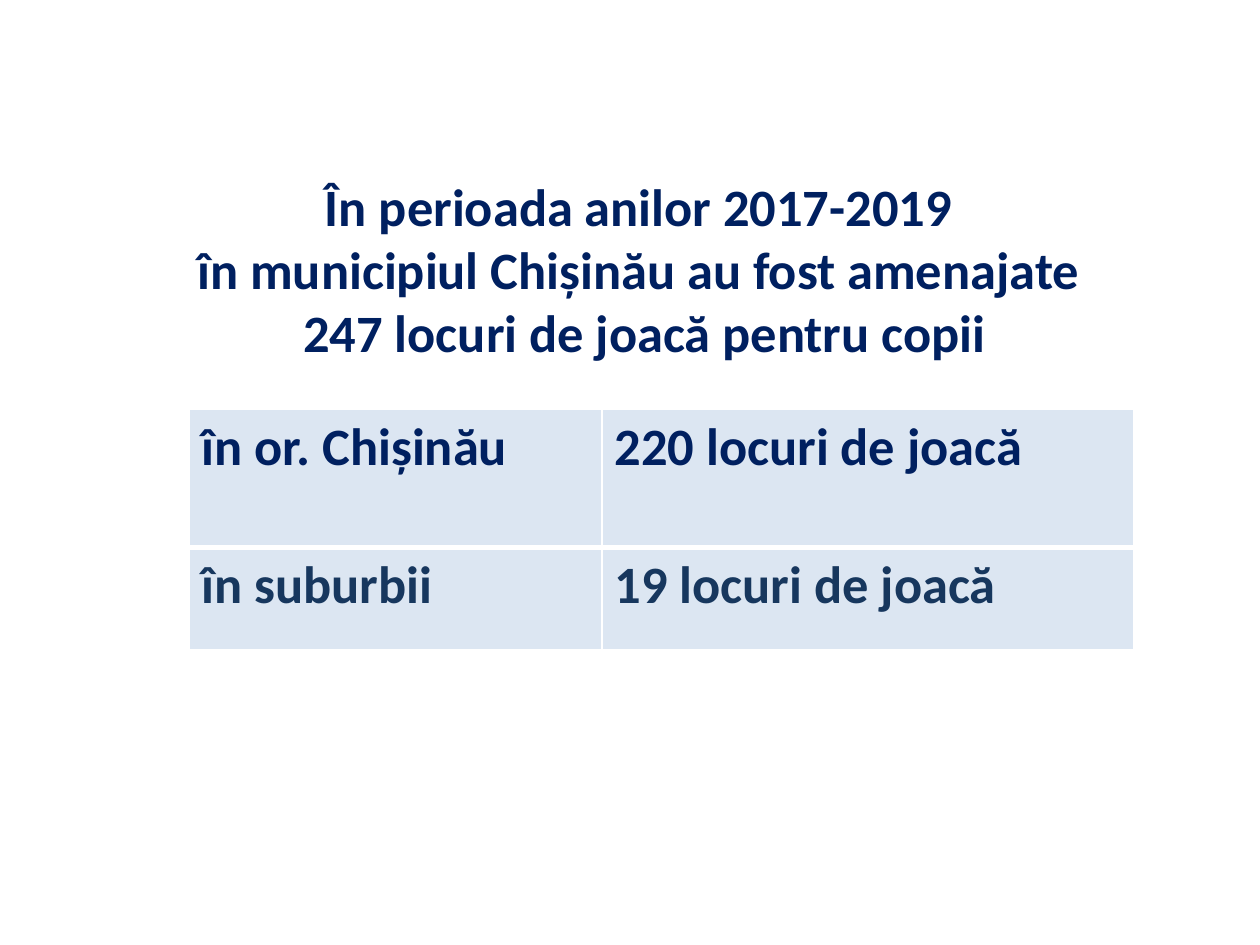
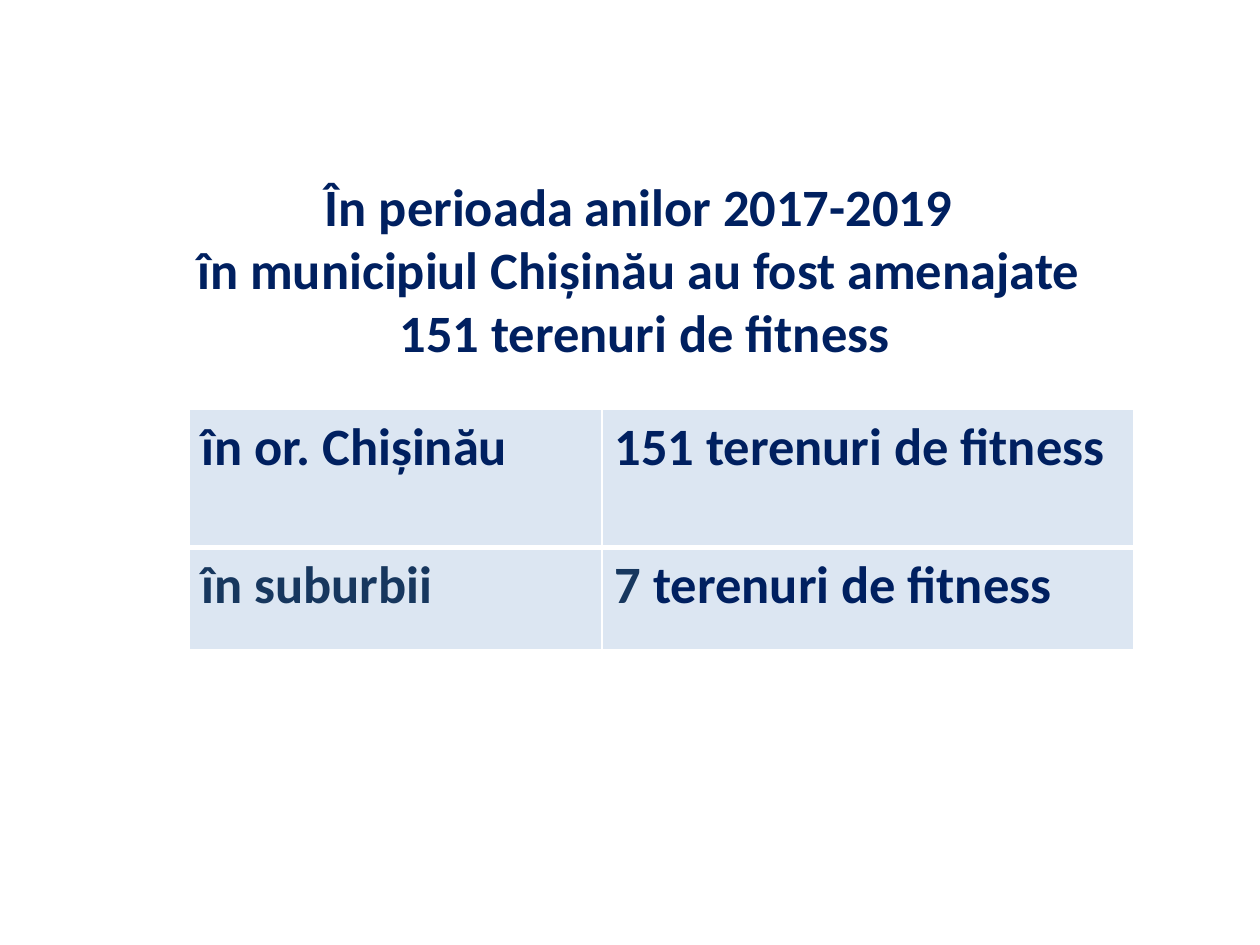
from lxml import etree
from pptx import Presentation
from pptx.dml.color import RGBColor
from pptx.enum.text import PP_ALIGN
from pptx.oxml.ns import qn
from pptx.util import Cm, Pt

CENTER = PP_ALIGN.CENTER
NAVY = RGBColor(0x00, 0x20, 0x60)
SLATE = RGBColor(0x17, 0x37, 0x5E)
PALE = RGBColor(0xDC, 0xE6, 0xF2)
WHITE = RGBColor(0xFF, 0xFF, 0xFF)
FONT = {"name": "Calibri", "size": Pt(30), "bold": True}
COLUMN_WIDTHS = (Cm(8.33), Cm(10.72))
ROW_HEIGHTS = (Cm(2.79), Cm(2.06))
THIN, THICK = Pt(1), Pt(3)
ROW_BORDERS = (
    {"lnL": THIN, "lnR": THIN, "lnT": THIN, "lnB": THICK},
    {"lnL": THIN, "lnR": THIN, "lnT": THICK, "lnB": THIN},
)
HEADING = ("În perioada anilor 2017-2019 ", "în municipiul Chișinău au fost amenajate ")
CITY = [("în or. Chișinău", NAVY)]
SUBURBS = [("în suburbii", SLATE)]
SLIDES = (
    ("247 locuri de joacă pentru copii",
     [("220 locuri de joacă", NAVY)],
     [("19 locuri de joacă", SLATE)]),
    ("151 terenuri de fitness",
     [("151 terenuri de fitness", NAVY)],
     [("7 ", SLATE), ("terenuri de fitness", NAVY)]),
)


def add_run(p, text, color):
    """Append a run in the shared font."""
    r = p.add_run()
    r.text = text
    for name, value in FONT.items():
        setattr(r.font, name, value)
    r.font.color.rgb = color


def add_heading(s, lines):
    """Add the centred heading, one paragraph per line."""
    tf = s.shapes.add_textbox(Cm(1.7), Cm(3.38), Cm(22.6), Cm(10.5)).text_frame
    tf.word_wrap = True
    for i, line in enumerate(lines):
        p = tf.add_paragraph() if i else tf.paragraphs[0]
        p.alignment = CENTER
        add_run(p, line, NAVY)


def set_borders(cell, borders):
    """Draw white cell borders of the given widths."""
    tc_pr = cell._tc.get_or_add_tcPr()
    for i, (tag, width) in enumerate(borders.items()):
        line = etree.Element(qn(f"a:{tag}"), w=str(width))
        fill = etree.SubElement(line, qn("a:solidFill"))
        etree.SubElement(fill, qn("a:srgbClr"), val=str(WHITE))
        tc_pr.insert(i, line)


def add_count_table(s, rows):
    """Add the table of places and counts."""
    table = s.shapes.add_table(len(rows), len(COLUMN_WIDTHS), Cm(3.81), Cm(8.25),
                               sum(COLUMN_WIDTHS), sum(ROW_HEIGHTS)).table
    for column, width in zip(table.columns, COLUMN_WIDTHS):
        column.width = width
    for row, height, borders, contents in zip(table.rows, ROW_HEIGHTS, ROW_BORDERS, rows):
        row.height = height
        for cell, runs in zip(row.cells, contents):
            cell.fill.solid()
            cell.fill.fore_color.rgb = PALE
            set_borders(cell, borders)
            for text, color in runs:
                add_run(cell.text_frame.paragraphs[0], text, color)


def main():
    """Build and save the presentation."""
    prs = Presentation()
    prs.slide_width, prs.slide_height = Cm(25.4), Cm(19.05)
    for total, city_count, suburb_count in SLIDES:
        s = prs.slides.add_slide(prs.slide_layouts[6])
        add_heading(s, (*HEADING, total))
        add_count_table(s, ((CITY, city_count), (SUBURBS, suburb_count)))
    prs.save("out.pptx")


if __name__ == "__main__":
    main()
